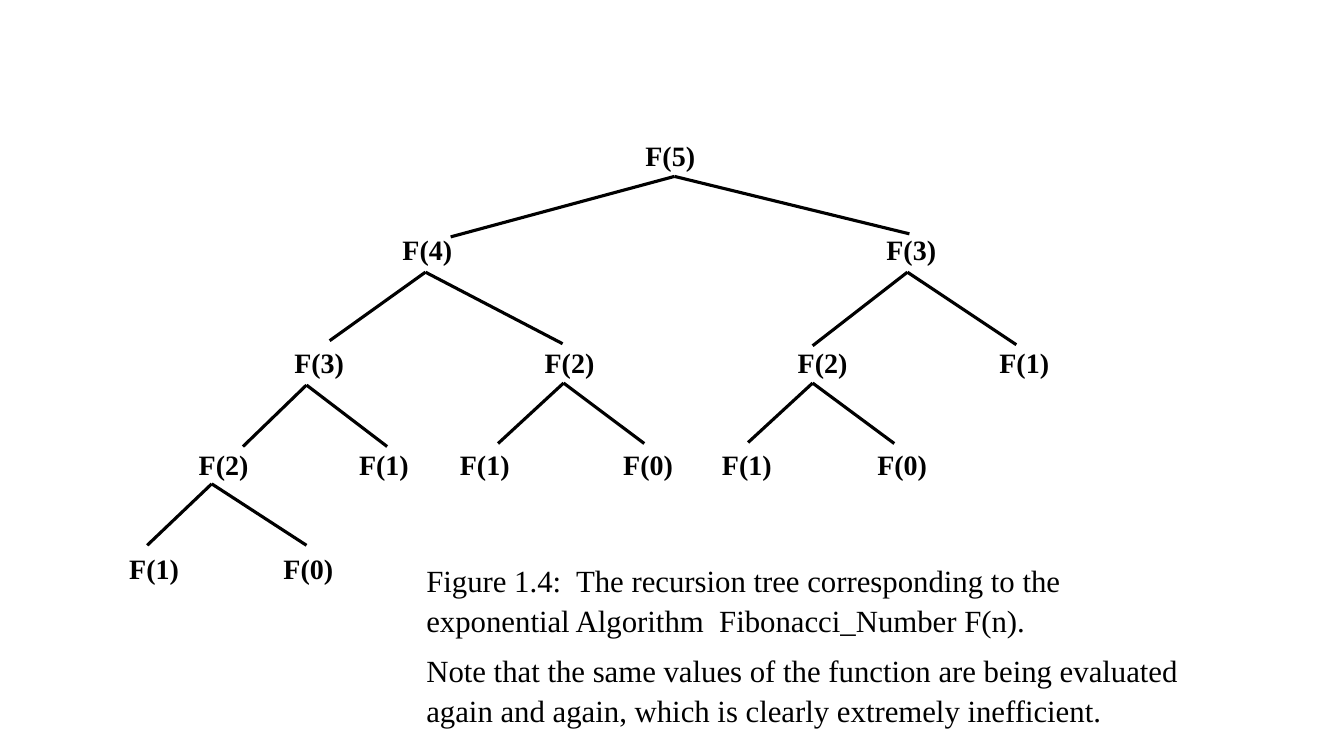
from typing import NamedTuple

import pptx
import pptx.dml.color
import pptx.enum.shapes
import pptx.enum.text
import pptx.oxml
import pptx.oxml.ns
import pptx.util
from pptx.util import Inches

COLORS = {"ink": "000000", "paper": "FFFFFF"}
FONT = "Times New Roman"
INSET = 0.1


class Level(NamedTuple):
    left: float
    top: float
    width: float
    nodes: list[tuple[int, float]]  # (n of F(n), centre x)


class Fork(NamedTuple):
    apex: tuple[float, float]
    ends: list[tuple[float, float]]


LEVELS = [
    Level(6.3, 1.32, 0.77, [(5, 6.65)]),
    Level(3.34, 2.26, 6.88, [(4, 4.24), (3, 9.04)]),
    Level(2.82, 3.38, 7.75, [(3, 3.16), (2, 5.65), (2, 8.16), (1, 10.16)]),
    Level(1.46, 4.39, 7.9, [(2, 2.22), (1, 3.81), (1, 4.81),
                            (0, 6.43), (1, 7.41), (0, 8.95)]),
    Level(0.69, 5.42, 2.72, [(1, 1.53), (0, 3.06)]),
]

FORKS = [
    Fork((6.69, 1.75), [(4.47, 2.35), (9.02, 2.32)]),
    Fork((4.22, 2.7), [(3.27, 3.38), (5.58, 3.41)]),
    Fork((9.0, 2.7), [(8.06, 3.43), (10.08, 3.42)]),
    Fork((3.04, 3.82), [(2.41, 4.43), (3.84, 4.43)]),
    Fork((5.59, 3.8), [(4.94, 4.4), (6.39, 4.4)]),
    Fork((8.06, 3.8), [(7.42, 4.39), (8.87, 4.4)]),
    Fork((2.1, 4.8), [(1.46, 5.41), (3.04, 5.41)]),
]

CAPTION = [
    "Figure 1.4:  The recursion tree corresponding to the exponential "
    "Algorithm  Fibonacci_Number F(n).",
    "Note that the same values of the function are being evaluated again "
    "and again, which is clearly extremely inefficient.",
]


def color(name: str) -> pptx.dml.color.RGBColor:
    return pptx.dml.color.RGBColor.from_string(COLORS[name])


def add_box(slide, left: float, top: float, width: float, height: float):
    box = slide.shapes.add_textbox(
        Inches(left), Inches(top), Inches(width), Inches(height))
    frame = box.text_frame
    frame.word_wrap = True
    frame.auto_size = pptx.enum.text.MSO_AUTO_SIZE.SHAPE_TO_FIT_TEXT
    return frame


def add_run(para, text: str, size: int, bold: bool = False) -> None:
    run = para.add_run()
    run.text = text
    run.font.name = FONT
    run.font.size = pptx.util.Pt(size)
    run.font.bold = bold
    run.font.color.rgb = color("ink")


def add_level(slide, level: Level) -> None:
    """Draw one row of nodes, each centred on its own tab stop."""
    frame = add_box(slide, level.left, level.top, level.width, 0.44)
    para = frame.paragraphs[0]
    tabs = pptx.oxml.parse_xml(
        f"<a:tabLst {pptx.oxml.ns.nsdecls('a')}/>")
    for n, mid in level.nodes:
        tab = tabs.makeelement(pptx.oxml.ns.qn("a:tab"), {
            "pos": str(Inches(mid - level.left - INSET)), "algn": "ctr"})
        tabs.append(tab)
        add_run(para, f"\tF({n})", 20, True)
    para._p.get_or_add_pPr().append(tabs)


def add_fork(slide, fork: Fork) -> None:
    for end in fork.ends:
        line = slide.shapes.add_connector(
            pptx.enum.shapes.MSO_CONNECTOR.STRAIGHT,
            *map(Inches, fork.apex + end))
        line.line.color.rgb = color("ink")
        line.line.width = pptx.util.Pt(2.25)
        line._element.spPr.append(pptx.oxml.parse_xml(
            f"<a:effectLst {pptx.oxml.ns.nsdecls('a')}/>"))


def add_note(slide) -> None:
    frame = add_box(slide, 3.63, 5.5, 8.19, 1.78)
    for i, text in enumerate(CAPTION):
        para = frame.add_paragraph() if i else frame.paragraphs[0]
        para.line_spacing = 1.07
        para.space_after = pptx.util.Pt(8)
        props = para._p.get_or_add_pPr()
        props.set("marL", str(Inches(0.5)))
        props.set("indent", "0")
        add_run(para, text, 22)


def main() -> None:
    deck = pptx.Presentation()
    deck.slide_width = Inches(13.33)
    deck.slide_height = Inches(7.5)
    slide = deck.slides.add_slide(deck.slide_layouts[6])
    fill = slide.background.fill
    fill.solid()
    fill.fore_color.rgb = color("paper")

    # Nodes of the tree
    for level in LEVELS:
        add_level(slide, level)

    # Caption
    add_note(slide)

    # Branches
    for fork in FORKS:
        add_fork(slide, fork)

    deck.save("out.pptx")


if __name__ == "__main__":
    main()
